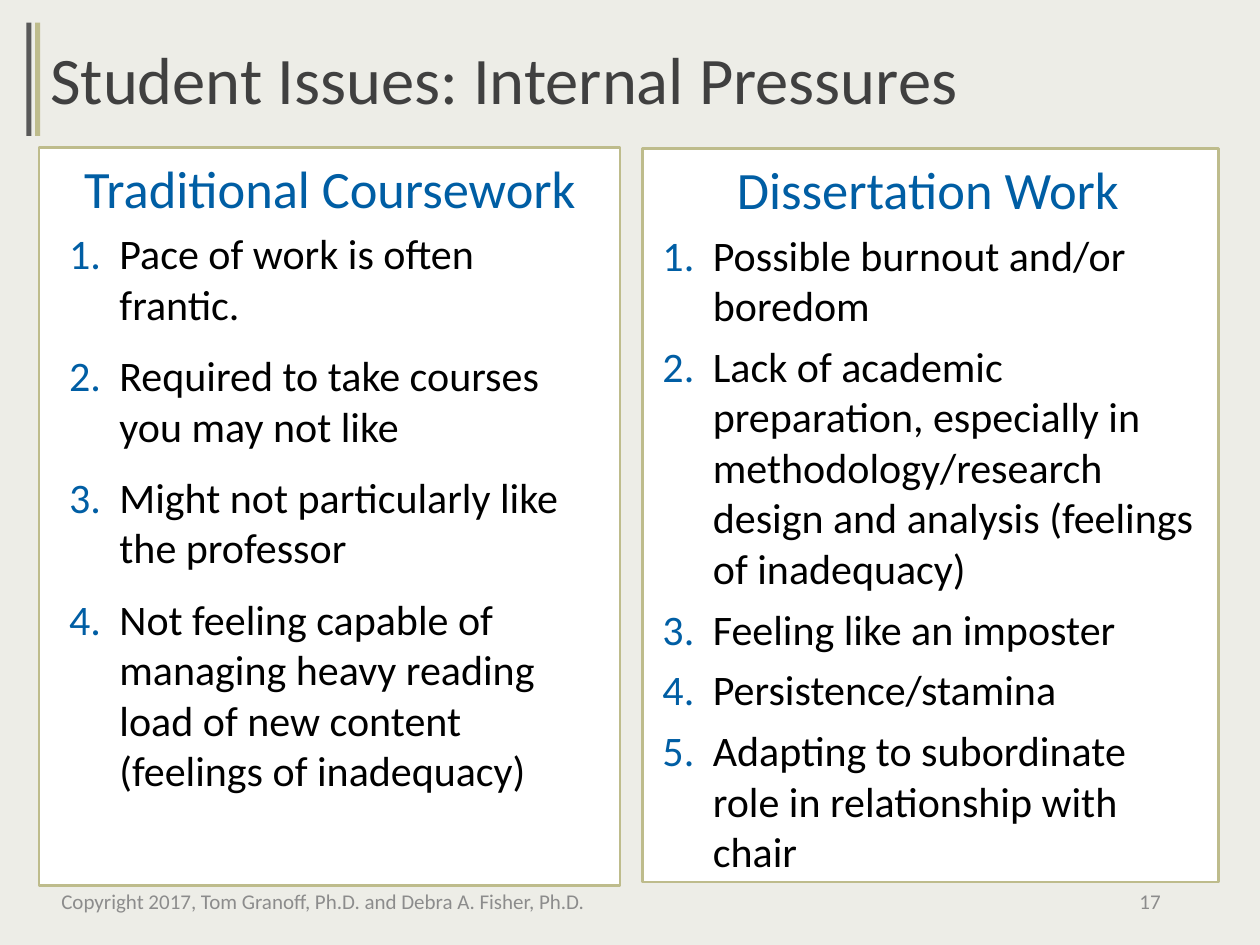
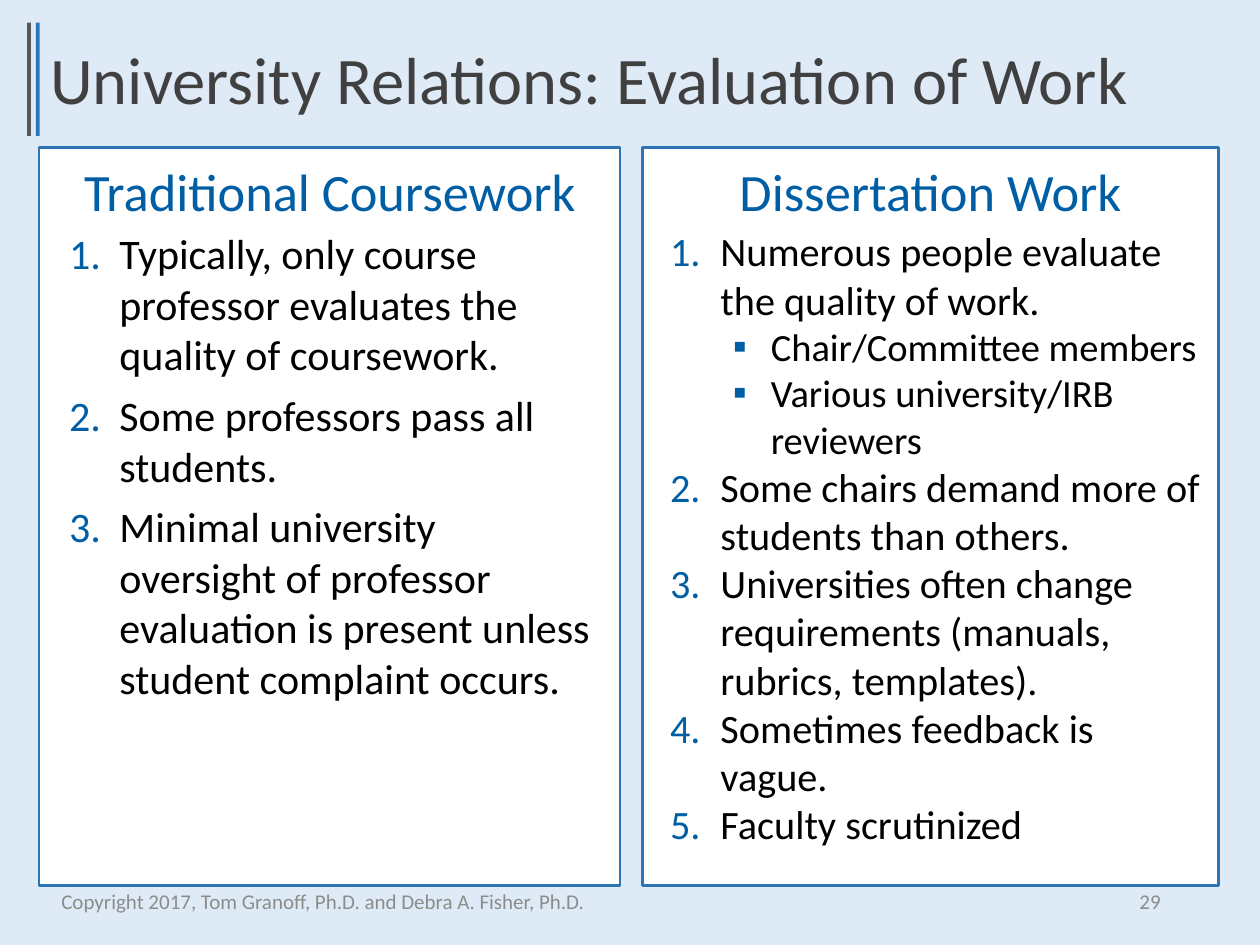
from lxml.etree import SubElement
from pptx import Presentation
from pptx.dml.color import RGBColor
from pptx.enum.shapes import MSO_SHAPE
from pptx.enum.text import MSO_ANCHOR, MSO_AUTO_SIZE, PP_ALIGN
from pptx.oxml.ns import qn
from pptx.util import Inches, Pt

FONT = "Calibri"
WHITE, BLACK = "FFFFFF", "000000"
TITLE_GRAY, BAR_GRAY, FOOTER_GRAY = "404040", "595959", "8C8C8C"
HEADING_BLUE = "005EA4"
COPYRIGHT = "Copyright 2017, Tom Granoff, Ph.D. and Debra A. Fisher, Ph.D."


def color(hex_value):
    return RGBColor.from_string(hex_value)


def write(paragraph, text, size=24, fill=BLACK, align=PP_ALIGN.LEFT, before=0):
    paragraph.alignment = align
    paragraph.space_before = Pt(before)
    run = paragraph.add_run()
    run.text = text
    run.font.name = FONT
    run.font.size = Pt(size)
    run.font.color.rgb = color(fill)


def add_bullet(paragraph, margin, hanging, tag, **attributes):
    properties = paragraph._p.get_or_add_pPr()
    properties.set("marL", str(Inches(margin)))
    properties.set("indent", str(-Inches(hanging)))
    bullet_color = SubElement(properties, qn("a:buClr"))
    SubElement(bullet_color, qn("a:srgbClr"), val=HEADING_BLUE)
    SubElement(properties, qn("a:buFont"), typeface=FONT)
    SubElement(properties, qn(tag), **attributes)


class ComparisonDeck:
    """Builds slides that compare coursework with dissertation work."""

    def __init__(self):
        self.presentation = Presentation()
        self.presentation.slide_width = Inches(10)
        self.presentation.slide_height = Inches(7.5)
        self.slide = None
        self.accent = None

    def start_slide(self, title, number, background, accent, bar_width):
        self.slide = self.presentation.slides.add_slide(self.presentation.slide_layouts[6])
        self.slide.background.fill.solid()
        self.slide.background.fill.fore_color.rgb = color(background)
        self.accent = accent
        self.label(title, 0.3, 0.25, 9.51, 0.74, size=38, fill=TITLE_GRAY)
        for center, fill in ((0.23, BAR_GRAY), (0.3, accent)):
            self.rectangle(center - bar_width / 2, 0.18, bar_width, 0.9, fill)
        footer = {"size": 12, "fill": FOOTER_GRAY, "anchor": MSO_ANCHOR.MIDDLE}
        self.label(COPYRIGHT, 0.38, 6.95, 4.37, 0.4, align=PP_ALIGN.CENTER, **footer)
        self.label(str(number), 7.06, 6.95, 2.25, 0.4, align=PP_ALIGN.RIGHT, **footer)

    def rectangle(self, left, top, width, height, fill, line=None):
        shape = self.slide.shapes.add_shape(
            MSO_SHAPE.RECTANGLE, Inches(left), Inches(top), Inches(width), Inches(height))
        shape.shadow.inherit = False
        shape.fill.solid()
        shape.fill.fore_color.rgb = color(fill)
        if line:
            shape.line.color.rgb = color(line)
            shape.line.width = Pt(1.5)
        else:
            shape.line.fill.background()

    def text_frame(self, left, top, width, height, anchor=MSO_ANCHOR.TOP):
        box = self.slide.shapes.add_textbox(
            Inches(left), Inches(top), Inches(width), Inches(height))
        frame = box.text_frame
        frame.word_wrap = True
        frame.vertical_anchor = anchor
        if anchor == MSO_ANCHOR.TOP:
            frame.auto_size = MSO_AUTO_SIZE.SHAPE_TO_FIT_TEXT
        return frame

    def label(self, text, left, top, width, height, anchor=MSO_ANCHOR.TOP, **style):
        frame = self.text_frame(left, top, width, height, anchor)
        write(frame.paragraphs[0], text, **style)

    def panel(self, left, top, width, height):
        self.rectangle(left, top, width, height, WHITE, self.accent)

    def heading(self, text, left, top, width):
        self.label(text, left, top, width, 0.61, size=30, fill=HEADING_BLUE,
                   align=PP_ALIGN.CENTER)

    def numbered_list(self, items, left, top, width, height, size=24, gap=0):
        """Writes numbered items; a tuple holds the sub-points of the item before it."""
        frame = self.text_frame(left, top, width, height)
        paragraph = frame.paragraphs[0]
        for index, item in enumerate(items):
            if isinstance(item, tuple):
                for point in item:
                    paragraph = frame.add_paragraph()
                    paragraph.level = 1
                    write(paragraph, point, size=size - 1)
                    add_bullet(paragraph, 0.8, 0.3, "a:buChar", char="▪")
                continue
            if index:
                paragraph = frame.add_paragraph()
            write(paragraph, item, size=size, before=gap if index else 0)
            add_bullet(paragraph, 0.4, 0.4, "a:buAutoNum", type="arabicPeriod")


def main():
    deck = ComparisonDeck()

    deck.start_slide("Student Issues: Internal Pressures", 17, "EDEDE7", "BEBC8C", 0.04)
    deck.panel(0.31, 1.17, 4.61, 5.86)
    deck.panel(5.1, 1.18, 4.57, 5.82)
    deck.heading("Traditional Coursework", 0.45, 1.19, 4.34)
    deck.heading("Dissertation Work", 5.22, 1.2, 4.29)
    deck.numbered_list([
        "Pace of work is often frantic.",
        "Required to take courses you may not like",
        "Might not particularly like the professor",
        "Not feeling capable of managing heavy reading load of new content "
        "(feelings of inadequacy)",
    ], 0.45, 1.76, 4.34, 4.64, gap=12)
    deck.numbered_list([
        "Possible burnout and/or boredom",
        "Lack of academic preparation, especially in methodology/research "
        "design and analysis (feelings of inadequacy)",
        "Feeling like an imposter",
        "Persistence/stamina",
        "Adapting to subordinate role in relationship with chair",
    ], 5.16, 1.77, 4.43, 5.28, gap=6)

    deck.start_slide("University Relations: Evaluation of Work", 29, "DEEBF7", "2E75B6", 0.03)
    deck.panel(0.31, 1.17, 4.61, 5.86)
    deck.panel(5.1, 1.17, 4.57, 5.86)
    deck.heading("Traditional Coursework", 0.45, 1.21, 4.34)
    deck.heading("Dissertation Work", 5.24, 1.21, 4.29)
    deck.numbered_list([
        "Typically, only course professor evaluates the quality of coursework.",
        "Some professors pass all students.",
        "Minimal university oversight of professor evaluation is present unless "
        "student complaint occurs.",
    ], 0.45, 1.76, 4.34, 3.9, gap=6)
    deck.numbered_list([
        "Numerous people evaluate the quality of work.",
        ("Chair/Committee members", "Various university/IRB reviewers"),
        "Some chairs demand more of students than others.",
        "Universities often change requirements (manuals, rubrics, templates).",
        "Sometimes feedback is vague.",
        "Faculty scrutinized",
    ], 5.22, 1.75, 4.43, 5.08, size=23)

    deck.presentation.save("out.pptx")


if __name__ == "__main__":
    main()
